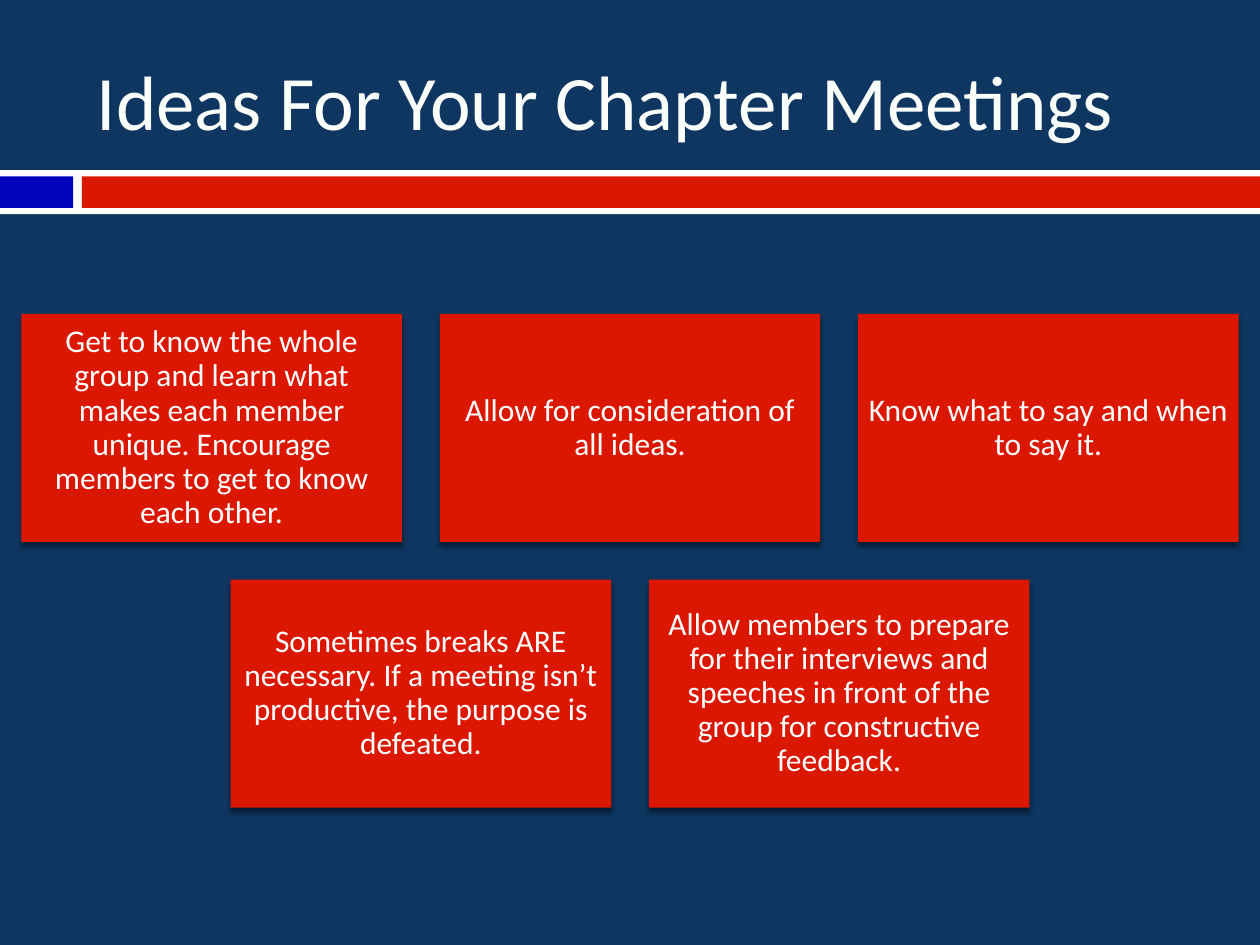
from lxml import etree
from pptx import Presentation
from pptx.dml.color import RGBColor
from pptx.enum.shapes import MSO_SHAPE
from pptx.enum.text import MSO_ANCHOR, PP_ALIGN
from pptx.oxml.ns import qn
from pptx.util import Inches, Pt

RECT = MSO_SHAPE.RECTANGLE
MIDDLE = MSO_ANCHOR.MIDDLE
LEFT, CENTER = PP_ALIGN.LEFT, PP_ALIGN.CENTER

TITLE = "Ideas For Your Chapter Meetings"
ROWS = [
    [
        "Get to know the whole group and learn what makes each member unique. "
        "Encourage members to get to know each other.",
        "Allow for consideration of all ideas.",
        "Know what to say and when to say it.",
    ],
    [
        "Sometimes breaks ARE necessary. If a meeting isn’t productive, "
        "the purpose is defeated.",
        "Allow members to prepare for their interviews and speeches in front "
        "of the group for constructive feedback.",
    ],
]
THEME = {
    "font": "Calibri",
    "back": "0E3661",
    "title": "FBFFFC",
    "white": "FFFFFF",
    "blue": "0003BB",
    "red": "DC1700",
    "shade": "000000",
    "big": 44,
    "body": 18,
}
BARS = [
    ((0, 1.35, 10, 0.35), "white"),
    ((0, 1.4, 0.58, 0.25), "blue"),
    ((0.65, 1.4, 9.35, 0.25), "red"),
]
WIDE, HIGH = 10, 7.5
CARD_W, CARD_H, GAP, TOP = 3.02, 1.81, 0.3, 2.49


def color(name):
    return RGBColor.from_string(THEME[name])


def add_rect(slide, box, fill):
    shape = slide.shapes.add_shape(RECT, *map(Inches, box))
    shape.fill.solid()
    shape.fill.fore_color.rgb = color(fill)
    shape.line.fill.background()
    shape.shadow.inherit = False
    return shape


def add_shade(shape):
    effects = shape._element.spPr.find(qn("a:effectLst"))
    outer = etree.SubElement(
        effects, qn("a:outerShdw"), blurRad=str(Pt(3)), dist=str(Pt(2.4)),
        dir="5400000", algn="ctr", rotWithShape="0")
    tint = etree.SubElement(outer, qn("a:srgbClr"), val=THEME["shade"])
    etree.SubElement(tint, qn("a:alpha"), val="45000")


def put_text(shape, text, size="body", ink="white", align=CENTER,
             inset=0.07, lead=0.9):
    frame = shape.text_frame
    frame.word_wrap = True
    frame.vertical_anchor = MIDDLE
    frame.margin_left = frame.margin_right = Inches(inset)
    frame.margin_top = frame.margin_bottom = Inches(min(inset, 0.07))
    para = frame.paragraphs[0]
    para.alignment = align
    para.line_spacing = lead
    run = para.add_run()
    run.text = text
    run.font.name = THEME["font"]
    run.font.size = Pt(THEME[size])
    run.font.color.rgb = color(ink)


def main():
    deck = Presentation()
    deck.slide_width, deck.slide_height = Inches(WIDE), Inches(HIGH)
    slide = deck.slides.add_slide(deck.slide_layouts[6])
    slide.background.fill.solid()
    slide.background.fill.fore_color.rgb = color("back")

    for box, fill in BARS:
        add_rect(slide, box, fill)

    head = slide.shapes.add_textbox(*map(Inches, (0.67, 0.25, 8.92, 1.08)))
    put_text(head, TITLE, size="big", ink="title", align=LEFT,
             inset=0.1, lead=1.0)

    for row, cards in enumerate(ROWS):
        span = len(cards) * (CARD_W + GAP) - GAP
        left = (WIDE - span) / 2
        top = TOP + row * (CARD_H + GAP)
        for col, text in enumerate(cards):
            box = (left + col * (CARD_W + GAP), top, CARD_W, CARD_H)
            card = add_rect(slide, box, "red")
            add_shade(card)
            put_text(card, text)

    deck.save("out.pptx")


if __name__ == "__main__":
    main()
